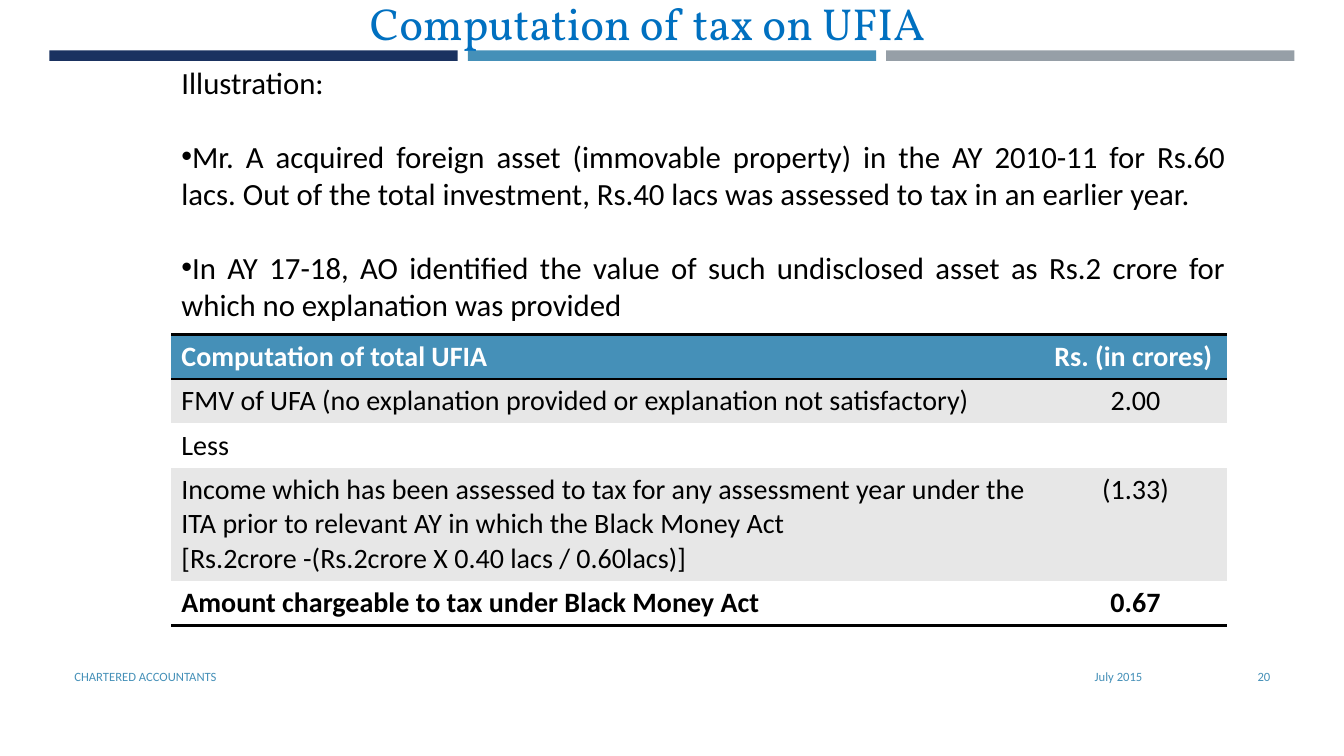
from dataclasses import dataclass

from lxml.etree import SubElement
from pptx import Presentation
from pptx.dml.color import RGBColor
from pptx.enum.shapes import MSO_SHAPE as Preset
from pptx.enum.text import MSO_ANCHOR as Anchor, MSO_AUTO_SIZE as AutoSize, PP_ALIGN as Align
from pptx.oxml import parse_xml
from pptx.oxml.ns import nsdecls, qn
from pptx.util import Inches, Pt

SLIDE_WIDTH, SLIDE_HEIGHT = Inches(13.33), Inches(7.5)
NAVY, BLUE, GREY = "1A3260", "4590B8", "969FA7"
BLACK, WHITE, BAND, TITLE_BLUE = "000000", "FFFFFF", "E7E7E7", "0070C0"
PLAIN_TABLE_STYLE = "{2D5ABB26-0587-4C30-8999-92F81FD0307C}"


@dataclass
class Area:
    """Position and size as percentages of the slide."""
    left: float
    top: float
    width: float
    height: float

    def box(self) -> tuple:
        return across(self.left), down(self.top), across(self.width), down(self.height)


@dataclass
class FooterItem:
    text: str
    left: float
    width: float
    align: Align


@dataclass
class TaxRow:
    label: str
    amount: str
    fill: str
    height: float = 5.78
    color: str = BLACK
    bold: bool = False
    borders: tuple = ()
    align: Align = Align.CENTER


FOOTER = [
    FooterItem("CHARTERED ACCOUNTANTS", 4.8, 56.7, Align.LEFT),
    FooterItem("July 2015", 62.4, 23.33, Align.RIGHT),
    FooterItem("20", 86.63, 8.63, Align.RIGHT),
]
ILLUSTRATION = [
    "Illustration:",
    "Mr. A acquired foreign asset (immovable property) in the AY 2010-11 for Rs.60 lacs. "
    "Out of the total investment, Rs.40 lacs was assessed to tax in an earlier year.",
    "In AY 17-18, AO identified the value of such undisclosed asset as Rs.2 crore "
    "for which no explanation was provided",
]
TAX_ROWS = [
    TaxRow("Computation of total UFIA", "Rs. (in crores)", BLUE, color=WHITE, bold=True,
           borders=("a:lnT", "a:lnB"), align=Align.LEFT),
    TaxRow("FMV of UFA (no explanation provided or explanation not satisfactory)", "2.00", BAND),
    TaxRow("Less", "", WHITE),
    TaxRow("Income which has been assessed to tax for any assessment year under the "
           "ITA prior to relevant AY in which the Black Money Act\n"
           "[Rs.2crore -(Rs.2crore X 0.40 lacs / 0.60lacs)]", "(1.33)", BAND, height=14.7),
    TaxRow("Amount chargeable to tax under Black Money Act", "0.67", WHITE, bold=True,
           borders=("a:lnB",)),
]
TAX_COLUMNS = (64.95, 13.58)


def across(percent: float) -> int:
    return round(SLIDE_WIDTH * percent / 100)


def down(percent: float) -> int:
    return round(SLIDE_HEIGHT * percent / 100)


def rgb(color: str) -> RGBColor:
    return RGBColor.from_string(color)


def place(shape, area: Area) -> None:
    shape.left, shape.top, shape.width, shape.height = area.box()


def format_text(text_frame, size: float, color: str, align: Align,
                font: str = "Calibri", bold: bool = False) -> None:
    for paragraph in text_frame.paragraphs:
        paragraph.alignment = align
        for run in paragraph.runs:
            run.font.name, run.font.size, run.font.bold = font, Pt(size), bold
            run.font.color.rgb = rgb(color)


def draw_bars(slide) -> None:
    for index, color in enumerate((NAVY, BLUE, GREY)):
        area = Area(3.68 + index * 31.13, 6.67, 30.38, 1.37)
        bar = slide.shapes.add_shape(Preset.RECTANGLE, *area.box())
        bar.shadow.inherit = False
        bar.fill.solid()
        bar.fill.fore_color.rgb = rgb(color)
        bar.line.fill.background()
        slide.shapes.title.element.addprevious(bar.element)


def fill_title(slide) -> None:
    title = slide.shapes.title
    place(title, Area(26.78, -1.2, 44.33, 8.53))
    text_frame = title.text_frame
    text_frame.text = "Computation of tax on UFIA"
    text_frame.vertical_anchor = Anchor.TOP
    text_frame.auto_size = AutoSize.NONE
    format_text(text_frame, 32, TITLE_BLUE, Align.LEFT, "Vollkorn")


def fill_illustration(slide) -> None:
    body = slide.placeholders[1]
    place(body, Area(12.75, 7.73, 79.2, 35.87))
    text_frame = body.text_frame
    text_frame.text = "\n".join(ILLUSTRATION)
    text_frame.auto_size = AutoSize.NONE
    format_text(text_frame, 22, BLACK, Align.JUSTIFY)
    for index, paragraph in enumerate(text_frame.paragraphs):
        paragraph.space_before = Pt(26.5 if index else 0)
        properties = body.element.findall(".//" + qn("a:pPr"))[index]
        properties.set("marL", "0")
        properties.set("indent", "0")
        if index:
            SubElement(properties, qn("a:buChar")).set("char", "•")
        else:
            SubElement(properties, qn("a:buNone"))


def draw_tax_table(slide) -> None:
    area = Area(12.75, 44.27, sum(TAX_COLUMNS), sum(row.height for row in TAX_ROWS))
    frame = slide.shapes.add_table(len(TAX_ROWS), len(TAX_COLUMNS), *area.box())
    table = frame.table
    table.first_row = table.horz_banding = False
    next(frame.element.iter(qn("a:tableStyleId"))).text = PLAIN_TABLE_STYLE
    for column, width in zip(table.columns, TAX_COLUMNS):
        column.width = across(width)
    for index, row in enumerate(TAX_ROWS):
        table.rows[index].height = down(row.height)
        for position, (text, align) in enumerate(((row.label, Align.LEFT), (row.amount, row.align))):
            cell = table.cell(index, position)
            cell.text_frame.text = text
            cell.fill.solid()
            cell.fill.fore_color.rgb = rgb(row.fill)
            format_text(cell.text_frame, 20, row.color, align, bold=row.bold)
    for row, row_element in zip(TAX_ROWS, frame.element.iter(qn("a:tr"))):
        for properties in row_element.iter(qn("a:tcPr")):
            for index, side in enumerate(row.borders):
                properties.insert(index, parse_xml(
                    f'<{side} {nsdecls("a")} w="{Pt(2)}"><a:solidFill>'
                    f'<a:srgbClr val="{BLACK}"/></a:solidFill></{side}>'))


def draw_footer(slide) -> None:
    for item in FOOTER:
        area = Area(item.left, 86.8, item.width, 5.33)
        text_frame = slide.shapes.add_textbox(*area.box()).text_frame
        text_frame.word_wrap = True
        text_frame.vertical_anchor = Anchor.MIDDLE
        text_frame.text = item.text
        format_text(text_frame, 9, BLUE, item.align)


def main() -> None:
    presentation = Presentation()
    presentation.slide_width, presentation.slide_height = SLIDE_WIDTH, SLIDE_HEIGHT
    slide = presentation.slides.add_slide(presentation.slide_layouts[1])
    draw_bars(slide)
    fill_title(slide)
    fill_illustration(slide)
    draw_tax_table(slide)
    draw_footer(slide)
    presentation.save("out.pptx")


if __name__ == "__main__":
    main()
